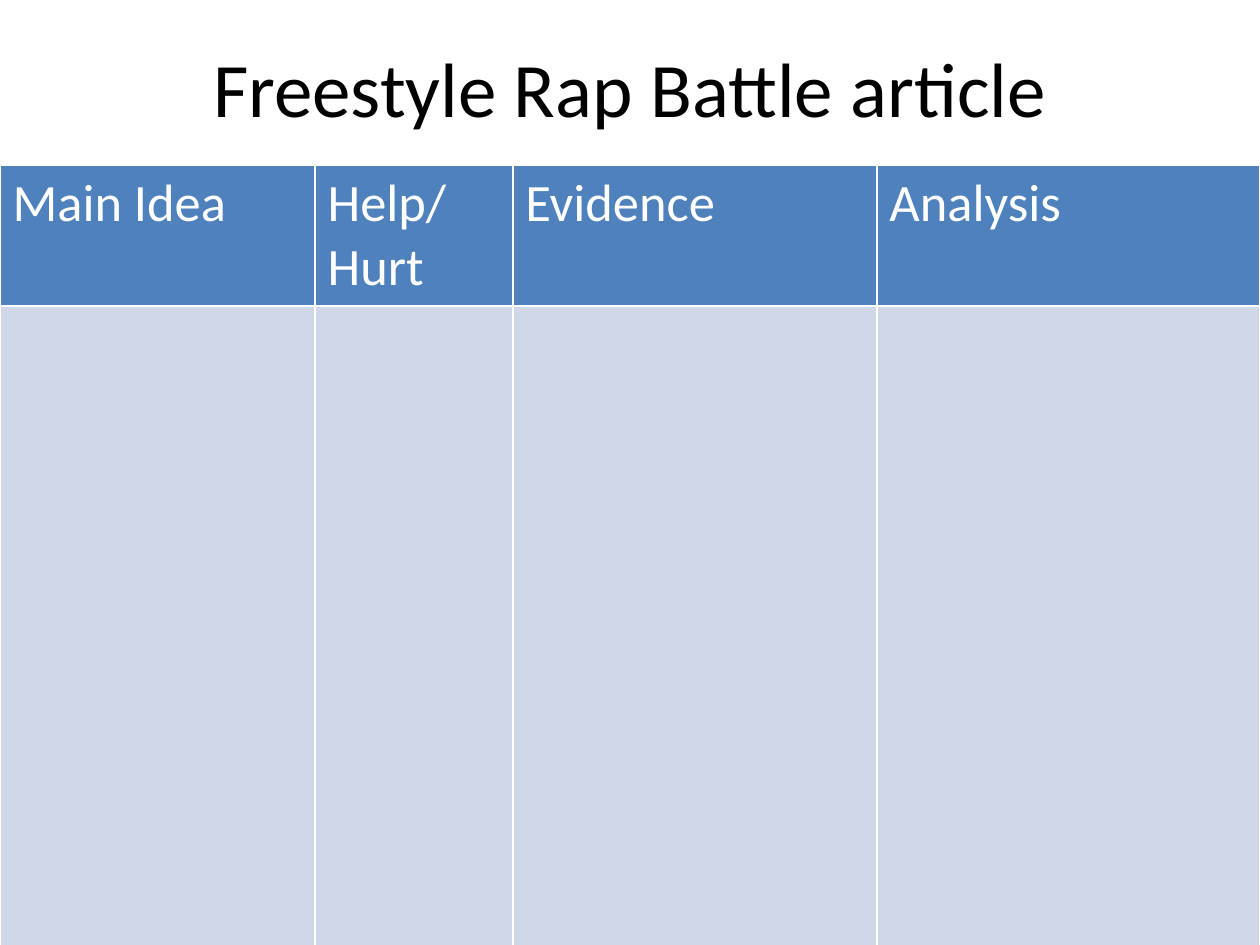
import pptx
import pptx.util
import pptx.dml.color
import pptx.enum.text

Inch, Pt = pptx.util.Inches, pptx.util.Pt
HUES = {"ink": "000000", "head": "4F81BD", "body": "D0D8E8", "white": "FFFFFF"}
COLS = {"Main Idea": 2.5, "Help/Hurt": 1.57, "Evidence": 2.89, "Analysis": 3.04}
ROWS = [0.65, 6.13]
TOP = 1.31


def hue(name):
    return pptx.dml.color.RGBColor.from_string(HUES[name])


def style(para, size, name):
    para.font.name = "Calibri"
    para.font.size = Pt(size)
    para.font.bold = False
    para.font.color.rgb = hue(name)


deck = pptx.Presentation()
deck.slide_width, deck.slide_height = Inch(10), Inch(7.5)
slide = deck.slides.add_slide(deck.slide_layouts[5])

# Title
title = slide.shapes.title
title.left, title.top = Inch(0.5), Inch(0.06)
title.width, title.height = Inch(9), Inch(1.25)
title.text_frame.text = "Freestyle Rap Battle article"
title.text_frame.vertical_anchor = pptx.enum.text.MSO_ANCHOR.MIDDLE
para = title.text_frame.paragraphs[0]
para.alignment = pptx.enum.text.PP_ALIGN.CENTER
style(para, 44, "ink")

# Table: the style gives the white rules between cells
table = slide.shapes.add_table(
    len(ROWS), len(COLS), 0, Inch(TOP), deck.slide_width, Inch(sum(ROWS))
).table
for row, height in zip(table.rows, ROWS):
    row.height = Inch(height)

for col, (label, width) in enumerate(COLS.items()):
    table.columns[col].width = Inch(width)
    for row, fill in enumerate(("head", "body")):
        cell = table.cell(row, col)
        cell.fill.solid()
        cell.fill.fore_color.rgb = hue(fill)
    head = table.cell(0, col)
    head.text = label
    style(head.text_frame.paragraphs[0], 30, "white")

deck.save("out.pptx")
